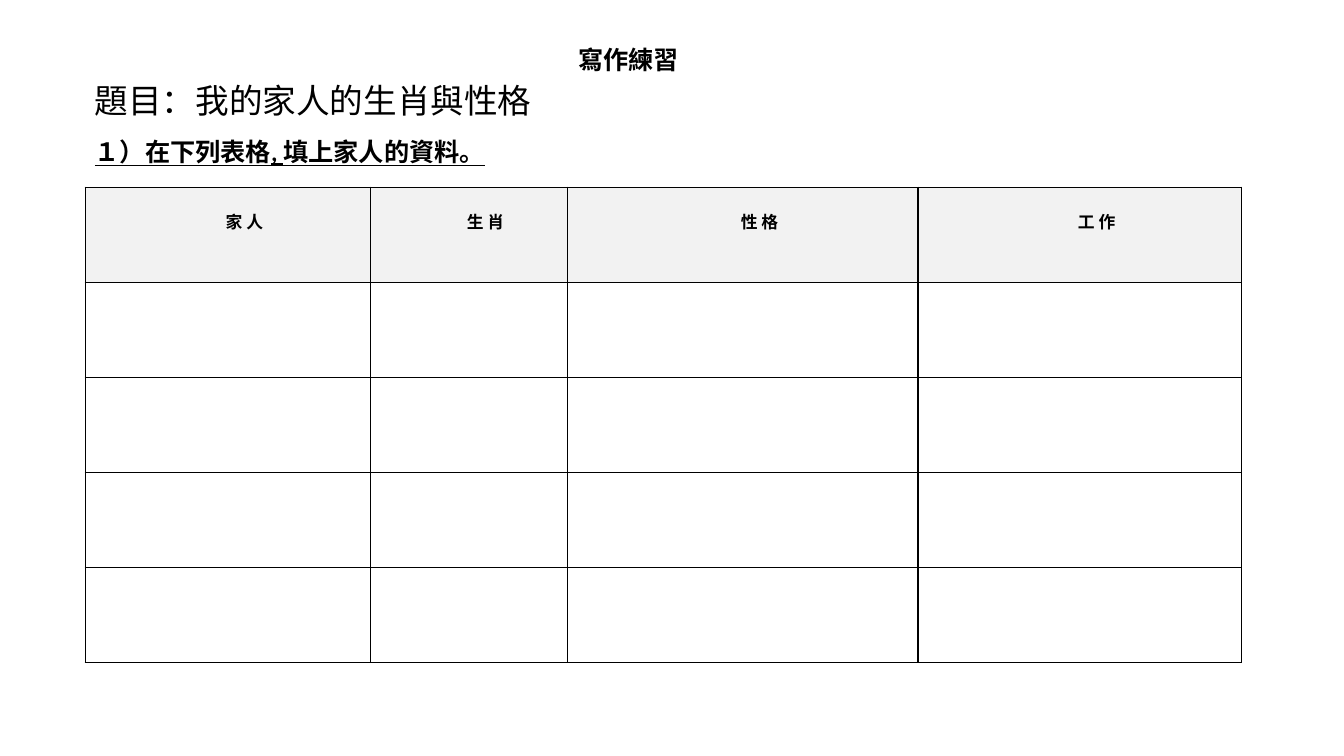
from dataclasses import dataclass

from lxml import etree
from pptx import Presentation
from pptx.dml.color import RGBColor
from pptx.enum.text import MSO_ANCHOR, MSO_AUTO_SIZE, PP_ALIGN
from pptx.oxml.ns import qn
from pptx.util import Pt

TOP = MSO_ANCHOR.TOP
GROW = MSO_AUTO_SIZE.SHAPE_TO_FIT_TEXT
MID = PP_ALIGN.CENTER
FULL = PP_ALIGN.JUSTIFY


@dataclass(frozen=True)
class Theme:
    ink: str = "000000"
    shade: str = "F2F2F2"
    topic: int = 24
    head: int = 18
    label: int = 12
    lead: int = 33
    rule: int = 1


class Sheet:
    def __init__(self, deck, theme):
        self.theme = theme
        self.slide = deck.slides.add_slide(deck.slide_layouts[5])

    def style(self, para, text, face, size, align, bold=True, line=False, lead=None):
        para.text = text
        para.alignment = align
        if lead:
            para.line_spacing = Pt(lead)
        font = para.font
        font.name = face
        font.size = Pt(size)
        font.bold = bold
        font.underline = line
        font.color.rgb = RGBColor.from_string(self.theme.ink)

    def title(self, box, lines):
        shape = self.slide.shapes.title
        shape.left, shape.top, shape.width, shape.height = map(Pt, box)
        frame = shape.text_frame
        frame.word_wrap = True
        frame.auto_size = GROW
        frame.vertical_anchor = TOP
        for i, line in enumerate(lines):
            para = frame.add_paragraph() if i else frame.paragraphs[0]
            self.style(para, **line)

    def border(self, cell):
        props = cell._tc.get_or_add_tcPr()
        for side in ("lnL", "lnR", "lnT", "lnB"):
            edge = etree.SubElement(props, qn(f"a:{side}"), w=str(Pt(self.theme.rule)))
            fill = etree.SubElement(edge, qn("a:solidFill"))
            etree.SubElement(fill, qn("a:srgbClr"), val=self.theme.ink)

    def table(self, left, top, cols, high, count, heads):
        area = map(Pt, (left, top, sum(cols), high * count))
        grid = self.slide.shapes.add_table(count, len(cols), *area).table
        grid.first_row = grid.horz_banding = False
        for col, wide in zip(grid.columns, cols):
            col.width = Pt(wide)
        for row in grid.rows:
            row.height = Pt(high)
        for cell in grid.iter_cells():
            self.border(cell)
            cell.fill.background()
        for cell, text in zip(grid.rows[0].cells, heads):
            cell.fill.solid()
            cell.fill.fore_color.rgb = RGBColor.from_string(self.theme.shade)
            cell.margin_left = cell.margin_right = Pt(5)
            cell.margin_top = cell.margin_bottom = 0
            para = cell.text_frame.paragraphs[0]
            self.style(para, text, "Calibri", self.theme.label, MID, lead=self.theme.lead)
            props = para._p.get_or_add_pPr()
            props.set("marL", str(Pt(24)))
            props.set("indent", "0")


def main():
    deck = Presentation()
    deck.slide_width, deck.slide_height = Pt(960), Pt(540)
    theme = Theme()
    sheet = Sheet(deck, theme)
    sheet.title((60.5, 28, 777, 96), [
        dict(text="寫作練習", face="Arial", size=theme.head, align=MID),
        dict(text="題目：我的家人的生肖與性格", face="Arial Narrow",
             size=theme.topic, align=FULL, bold=False, lead=theme.lead),
        dict(text="１）在下列表格, 填上家人的資料。", face="Calibri",
             size=theme.head, align=FULL, line=True, lead=theme.lead),
    ])
    sheet.table(60.8, 133.8, (203.6, 140.9, 250.4, 231.4), 67.85, 5,
                ("家 人", "生 肖", "性 格", "工 作"))
    deck.save("out.pptx")


if __name__ == "__main__":
    main()
